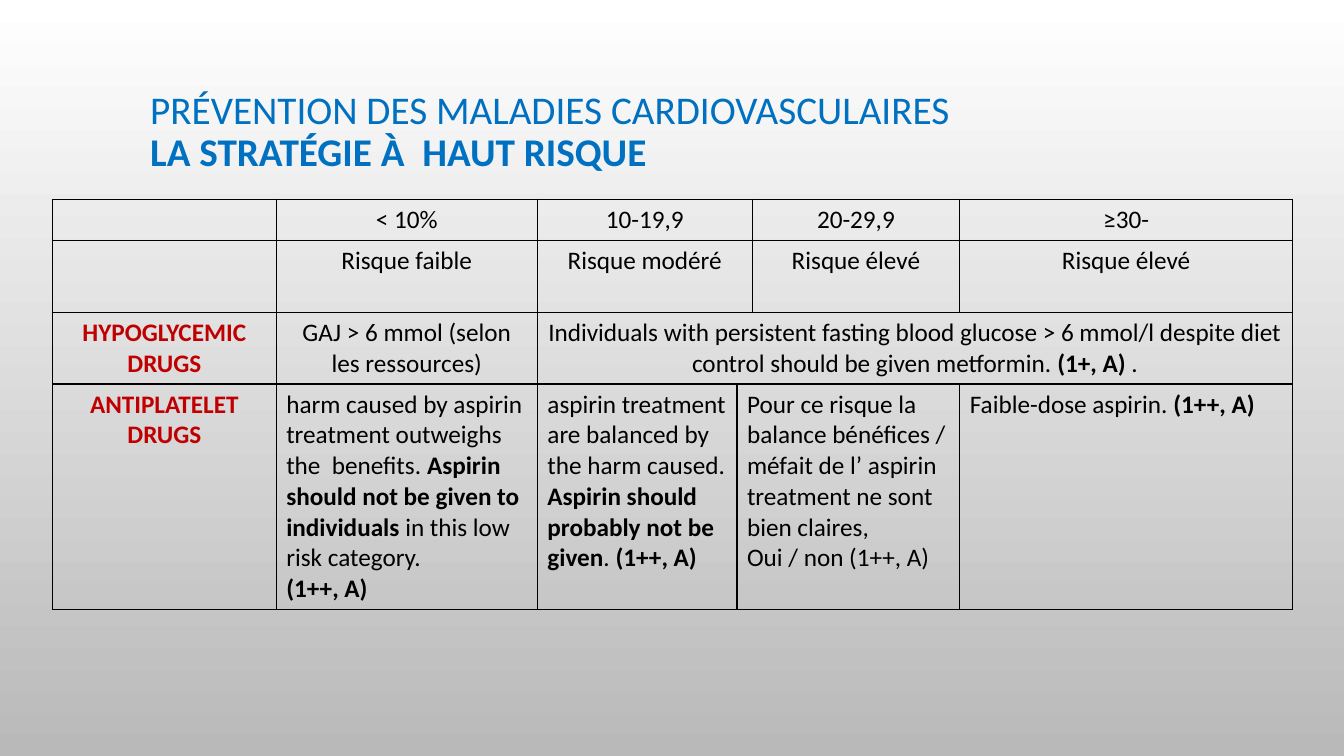
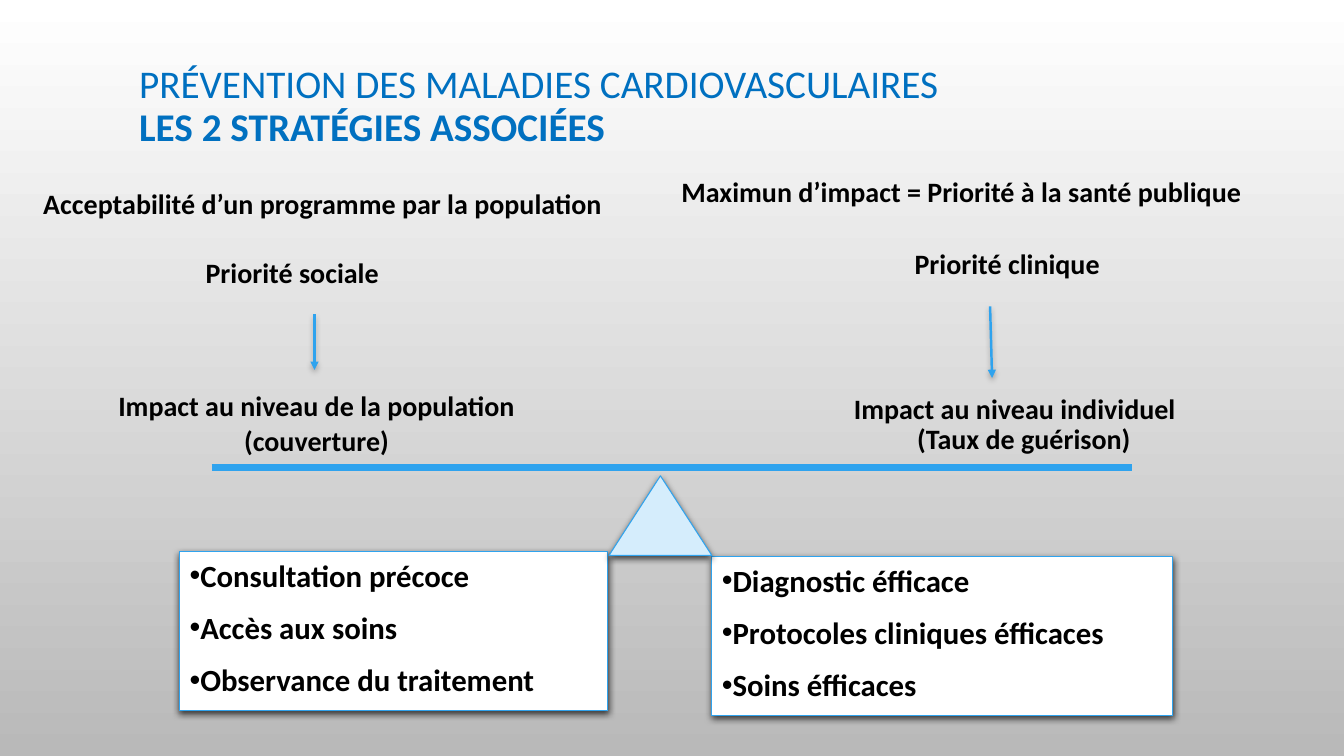
from lxml import etree
from pptx import Presentation
from pptx.dml.color import RGBColor
from pptx.enum.shapes import MSO_CONNECTOR, MSO_SHAPE
from pptx.enum.text import MSO_ANCHOR, MSO_AUTO_SIZE, PP_ALIGN
from pptx.oxml import parse_xml
from pptx.oxml.ns import nsdecls, qn
from pptx.util import Pt

PX = 9144  # EMU; 100 px make one inch
FONT = "Calibri"
BLACK = RGBColor(0x00, 0x00, 0x00)
WHITE = RGBColor(0xFF, 0xFF, 0xFF)
GREY = RGBColor(0xB9, 0xB9, 0xB9)
TITLE_BLUE = RGBColor(0x00, 0x70, 0xC0)
BLUE = RGBColor(0x2F, 0xA3, 0xEE)
PALE_BLUE = RGBColor(0xD5, 0xED, 0xFC)
RED = RGBColor(0xC0, 0x00, 0x00)
LEFT, CENTER = PP_ALIGN.LEFT, PP_ALIGN.CENTER


def add_run(paragraph, text, size, bold=False, color=BLACK):
    run = paragraph.add_run()
    run.text = text
    run.font.name = FONT
    run.font.size = Pt(size)
    run.font.bold = bold
    run.font.color.rgb = color


def set_shadow(shape, opacity=0, blur=0):
    """Drop shadow falling straight down; none when opacity is 0."""
    effects = etree.SubElement(shape._element.spPr, qn("a:effectLst"))
    if opacity:
        effects.append(parse_xml(
            f'<a:outerShdw {nsdecls("a")} blurRad="{Pt(blur)}" dist="{Pt(2)}" '
            f'dir="5400000" rotWithShape="0"><a:srgbClr val="{BLACK}">'
            f'<a:alpha val="{opacity * 1000}"/></a:srgbClr></a:outerShdw>'))


prs = Presentation()
prs.slide_width, prs.slide_height = 1333 * PX, 750 * PX

# Shared background
backdrop = prs.slide_master.background.fill
backdrop.gradient()
backdrop.gradient_angle = 270
for stop, color in zip(backdrop.gradient_stops, (WHITE, GREY)):
    stop.color.rgb = color

# Slides and their titles
TITLE_ONLY, TWO_CONTENT = prs.slide_layouts[5], prs.slide_layouts[3]
slides = []
for layout, left, top, strategy in (
    (TITLE_ONLY, 139, 44, "LA STRATÉGIE À  HAUT RISQUE"),
    (TWO_CONTENT, 128, 19, "LES 2 STRATÉGIES ASSOCIÉES"),
):
    slide = prs.slides.add_slide(layout)
    title = slide.shapes.title
    title.left, title.top = left * PX, top * PX
    title.width, title.height = 1133 * PX, 175 * PX
    frame = title.text_frame
    frame.auto_size = MSO_AUTO_SIZE.NONE
    frame.vertical_anchor = MSO_ANCHOR.MIDDLE
    heading = frame.paragraphs[0]
    heading.alignment = LEFT
    heading.line_spacing = 0.9
    add_run(heading, "PRÉVENTION DES MALADIES CARDIOVASCULAIRES", 28, color=TITLE_BLUE)
    heading.add_line_break()
    add_run(heading, strategy, 28, True, TITLE_BLUE)
    slides.append(slide)
high_risk, combined = slides

# Slide 1: treatment by risk level
COLUMNS = (222, 259, 198, 15, 206, 330)
ROWS = (41, 71, 71, 224)
table = high_risk.shapes.add_table(
    len(ROWS), len(COLUMNS), 52 * PX, 198 * PX, sum(COLUMNS) * PX, sum(ROWS) * PX).table
table.first_row = table.horz_banding = False
for column, width in zip(table.columns, COLUMNS):
    column.width = width * PX
for row, height in zip(table.rows, ROWS):
    row.height = height * PX
for cell in table.iter_cells():
    borders = cell._tc.get_or_add_tcPr()
    for side in ("lnL", "lnR", "lnT", "lnB"):
        borders.append(parse_xml(
            f'<a:{side} {nsdecls("a")} w="{Pt(1)}"><a:solidFill>'
            f'<a:srgbClr val="{BLACK}"/></a:solidFill></a:{side}>'))
    cell.fill.background()
for row, first, last in ((0, 2, 3), (1, 2, 3), (2, 2, 5), (3, 3, 4)):
    table.cell(row, first).merge(table.cell(row, last))

# (row, column): paragraphs, each a list of (text, bold)
treatments = {
    (0, 1): [[("< 10%", False)]],
    (0, 2): [[("10-19,9", False)]],
    (0, 4): [[("20-29,9", False)]],
    (0, 5): [[("≥30-", False)]],
    (1, 1): [[("Risque faible", False)]],
    (1, 2): [[("Risque modéré", False)]],
    (1, 4): [[("Risque élevé", False)]],
    (1, 5): [[("Risque élevé", False)]],
    (2, 0): [[("HYPOGLYCEMIC DRUGS", True)]],
    (2, 1): [[("GAJ > 6 mmol (selon les ressources)", False)]],
    (2, 2): [[("Individuals with persistent fasting blood glucose > 6 mmol/l despite "
               "diet control should be given metformin. ", False),
              ("(1+, A) ", True), (".", False)]],
    (3, 0): [[("ANTIPLATELET DRUGS", True)]],
    (3, 1): [[("harm caused by aspirin treatment outweighs the  benefits. ", False),
              ("Aspirin should not be given to individuals ", True),
              ("in this low risk category.", False)],
             [("(1++, A)", True)]],
    (3, 2): [[("aspirin treatment", False)],
             [("are balanced by the harm caused.", False)],
             [("Aspirin should probably not be given", True), (". ", False),
              ("(1++, A)", True)]],
    (3, 3): [[("Pour ce risque la balance bénéfices / méfait de l’ aspirin treatment "
               "ne sont bien claires,", False)],
             [("Oui / non (1++, A)", False)]],
    (3, 5): [[("Faible-dose aspirin. ", False), ("(1++, A)", True)]],
}
for (row, col), paragraphs in treatments.items():
    frame = table.cell(row, col).text_frame
    for i, runs in enumerate(paragraphs):
        paragraph = frame.add_paragraph() if i else frame.paragraphs[0]
        paragraph.alignment = LEFT if row == 3 and col else CENTER
        for text, bold in runs:
            add_run(paragraph, text, 18, bold, BLACK if col else RED)

# Slide 2: statements on both sides, each line (text, alignment, line spacing)
statements = (
    (33, 163, 621, 55, [("Acceptabilité d’un programme par la population", LEFT, 1.5)]),
    (194, 249, 268, 44, [("Priorité sociale", LEFT, 1)]),
    (96, 380, 436, 78, [("Impact au niveau de la population", CENTER, 1),
                        ("(couverture)", CENTER, 0.5)]),
    (631, 168, 645, 44, [("Maximun d’impact = Priorité à la santé publique", CENTER, 1)]),
    (761, 249, 476, 35, [("Priorité clinique", CENTER, 0.7)]),
    (837, 383, 357, 71, [("Impact au niveau individuel", LEFT, 1),
                         ("(Taux de guérison)", CENTER, 0.3)]),
)
for left, top, width, height, lines in statements:
    frame = combined.shapes.add_textbox(
        left * PX, top * PX, width * PX, height * PX).text_frame
    frame.word_wrap = True
    for i, (text, alignment, spacing) in enumerate(lines):
        paragraph = frame.add_paragraph() if i else frame.paragraphs[0]
        paragraph.alignment = alignment
        paragraph.line_spacing = spacing
        if i:
            paragraph.space_before = Pt(12)
        add_run(paragraph, text, 20, True)

# Arrows from priority to impact, and the beam of the balance
for x1, y1, x2, y2, weight, is_arrow in (
    (312, 312, 312, 367, 1.75, True),
    (982, 304, 984, 375, 1.75, True),
    (210, 464, 1123, 464, 5, False),
):
    line = combined.shapes.add_connector(
        MSO_CONNECTOR.STRAIGHT, x1 * PX, y1 * PX, x2 * PX, y2 * PX)
    line.line.color.rgb = BLUE
    line.line.width = Pt(weight)
    if is_arrow:
        etree.SubElement(line.line._get_or_add_ln(), qn("a:tailEnd"), type="triangle")
        set_shadow(line, 28, 4)
    else:
        set_shadow(line)

# Pivot of the balance
pivot = combined.shapes.add_shape(
    MSO_SHAPE.ISOSCELES_TRIANGLE, 604 * PX, 472 * PX, 102 * PX, 79 * PX)
pivot.fill.solid()
pivot.fill.fore_color.rgb = PALE_BLUE
pivot.line.color.rgb = BLUE
pivot.line.width = Pt(0.75)
set_shadow(pivot, 69, 5)

# Conditions listed under each side
for index, left, top, width, conditions in (
    (1, 178, 547, 425,
     ("Consultation précoce", "Accès aux soins", "Observance du traitement")),
    (2, 706, 552, 457,
     ("Diagnostic éfficace", "Protocoles cliniques éfficaces", "Soins éfficaces")),
):
    box = combined.placeholders[index]
    box.left, box.top, box.width, box.height = left * PX, top * PX, width * PX, 158 * PX
    box.fill.solid()
    box.fill.fore_color.rgb = WHITE
    box.line.color.rgb = BLUE
    box.line.width = Pt(0.75)
    set_shadow(box, 69, 5)
    frame = box.text_frame
    frame.auto_size = MSO_AUTO_SIZE.NONE
    for i, condition in enumerate(conditions):
        paragraph = frame.add_paragraph() if i else frame.paragraphs[0]
        properties = paragraph._p.get_or_add_pPr()
        properties.set("marL", "0")
        properties.set("indent", "0")
        etree.SubElement(properties, qn("a:buChar"), char="•")
        paragraph.space_before = Pt(11 if i else 0)
        add_run(paragraph, condition, 22, True)

prs.save("out.pptx")
